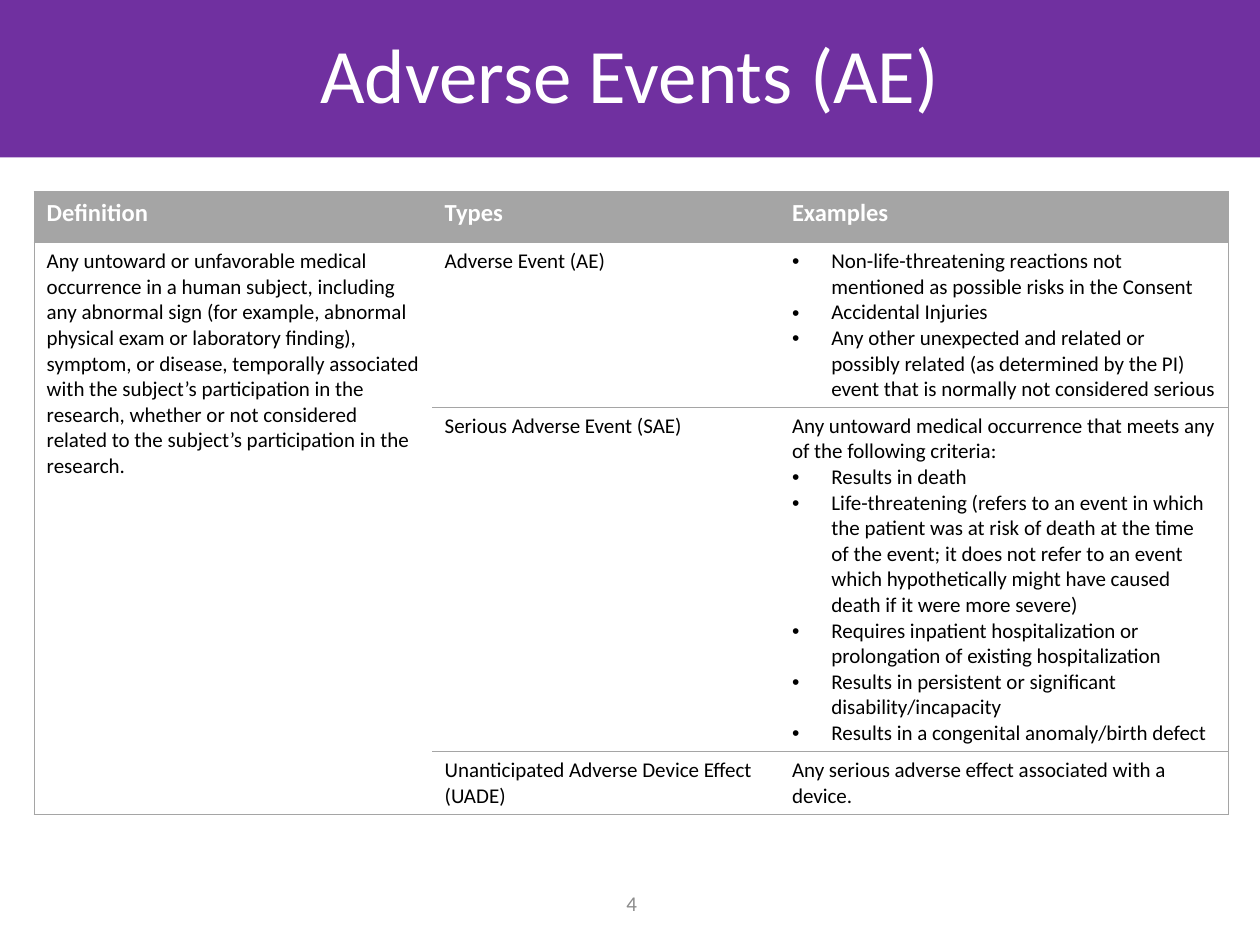
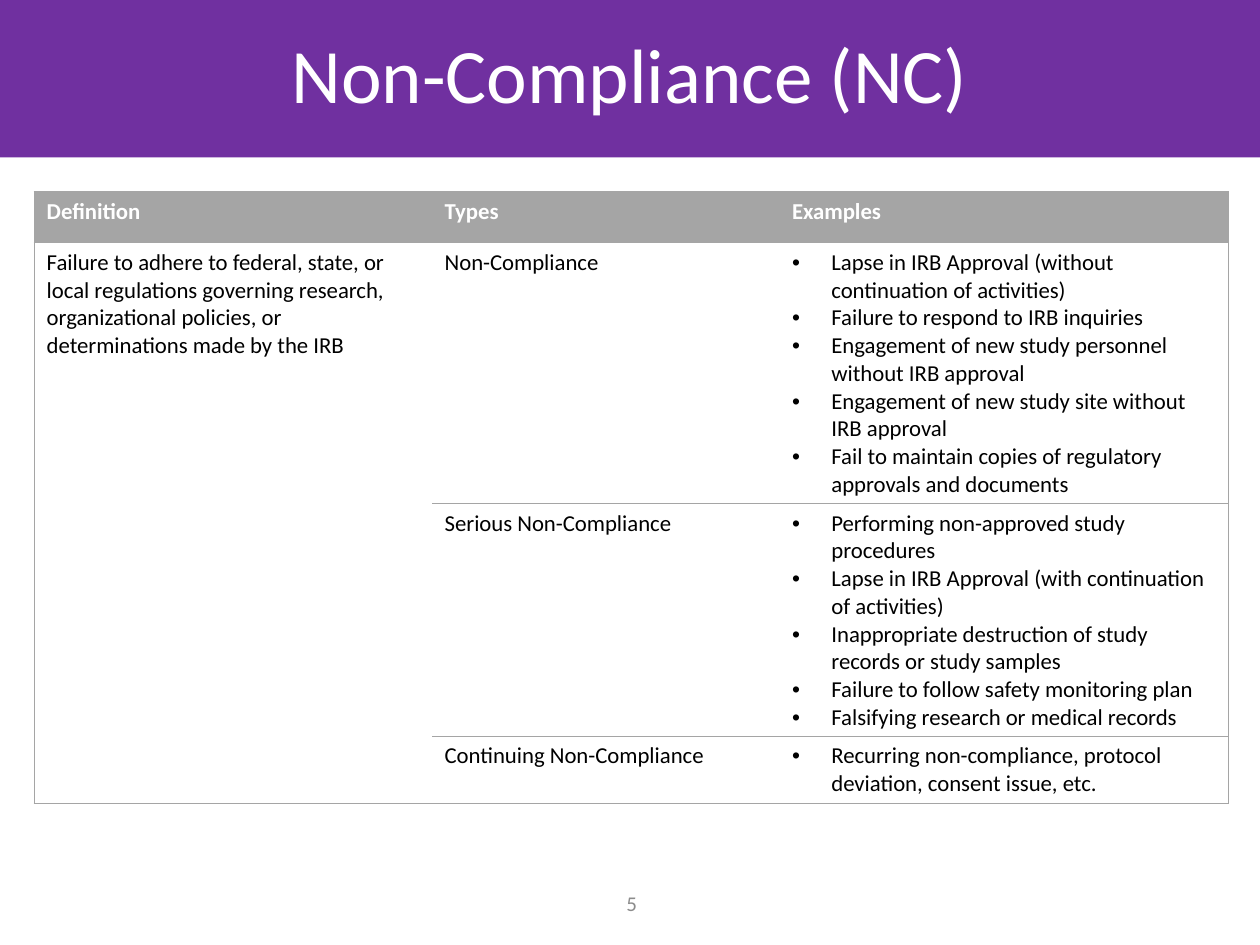
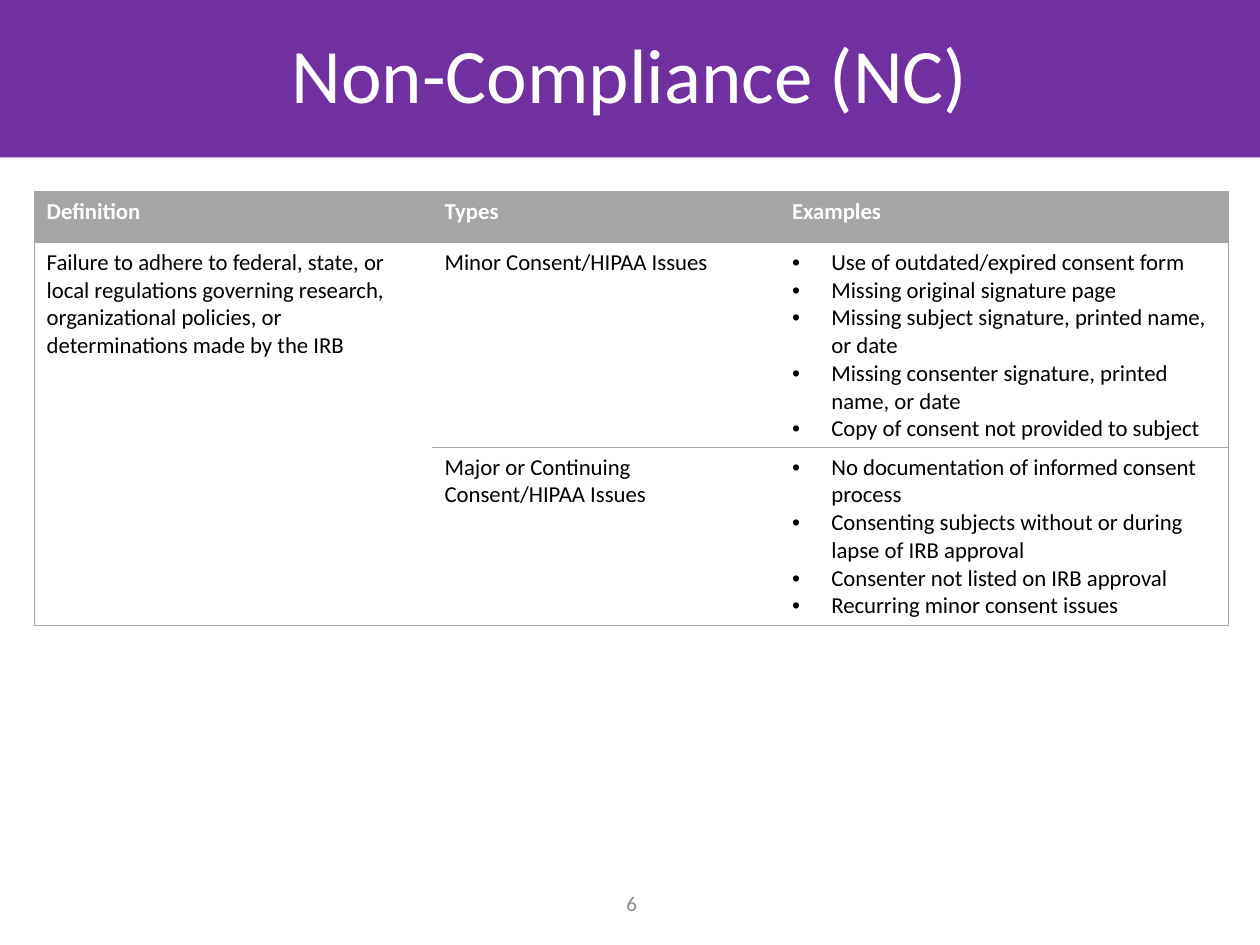
from dataclasses import dataclass

from lxml.etree import SubElement
from pptx import Presentation
from pptx.dml.color import RGBColor
from pptx.enum.shapes import MSO_SHAPE
from pptx.enum.text import MSO_ANCHOR, PP_ALIGN
from pptx.oxml.ns import qn
from pptx.slide import Slide
from pptx.table import _Cell
from pptx.text.text import TextFrame, _Paragraph
from pptx.util import Pt

PURPLE = RGBColor(0x70, 0x30, 0xA0)
GREY = RGBColor(0xA5, 0xA5, 0xA5)
NUMBER_GREY = RGBColor(0x8C, 0x8C, 0x8C)
WHITE = RGBColor(0xFF, 0xFF, 0xFF)
BLACK = RGBColor(0x00, 0x00, 0x00)

FONT = "Calibri"
SLIDE_WIDTH, SLIDE_HEIGHT = Pt(720), Pt(540)
BAND_HEIGHT = Pt(90)
TABLE_LEFT, TABLE_TOP = Pt(19.5), Pt(109.4)
COLUMN_WIDTHS = (Pt(227.4), Pt(198.5), Pt(256.8))
HEADINGS = ("Definition", "Types", "Examples")
HEADER_HEIGHT = Pt(29.2)
BULLET_INDENT = Pt(22.5)
RULE_WIDTH = Pt(0.5)
NO_STYLE_NO_GRID = "{2D5ABB26-0587-4C30-8999-92F81FD0307C}"


@dataclass(frozen=True)
class EventType:
    name: str
    height: float
    bullets: tuple[str, ...] = ()
    intro: str = ""


@dataclass(frozen=True)
class Topic:
    title: str
    number: int
    header_size: float
    body_size: float
    definition: str
    types: tuple[EventType, ...]


NON_COMPLIANCE = (
    "Failure to adhere to federal, state, or local regulations governing research, "
    "organizational policies, or determinations made by the IRB"
)

TOPICS = (
    Topic(
        "Adverse Events (AE)", 4, 14, 12,
        "Any untoward or unfavorable medical occurrence in a human subject, including any "
        "abnormal sign (for example, abnormal physical exam or laboratory finding), symptom, "
        "or disease, temporally associated with the subject’s participation in the research, "
        "whether or not considered related to the subject’s participation in the research.",
        (
            EventType("Adverse Event (AE)", 94, (
                "Non-life-threatening reactions not mentioned as possible risks in the Consent",
                "Accidental Injuries",
                "Any other unexpected and related or possibly related (as determined by the PI) "
                "event that is normally not considered serious",
            )),
            EventType("Serious Adverse Event (SAE)", 197, (
                "Results in death",
                "Life-threatening (refers to an event in which the patient was at risk of death "
                "at the time of the event; it does not refer to an event which hypothetically "
                "might have caused death if it were more severe)",
                "Requires inpatient hospitalization or prolongation of existing hospitalization",
                "Results in persistent or significant disability/incapacity",
                "Results in a congenital anomaly/birth defect",
            ), "Any untoward medical occurrence that meets any of the following criteria:"),
            EventType("Unanticipated Adverse Device Effect (UADE)", 36,
                      intro="Any serious adverse effect associated with a device."),
        ),
    ),
    Topic(
        "Non-Compliance (NC)", 5, 13, 13, NON_COMPLIANCE,
        (
            EventType("Non-Compliance", 149, (
                "Lapse in IRB Approval (without continuation of activities)",
                "Failure to respond to IRB inquiries",
                "Engagement of new study personnel without IRB approval",
                "Engagement of new study site without IRB approval",
                "Fail to maintain copies of regulatory approvals and documents",
            )),
            EventType("Serious Non-Compliance", 133, (
                "Performing non-approved study procedures",
                "Lapse in IRB Approval (with continuation of activities)",
                "Inappropriate destruction of study records or study samples",
                "Failure to follow safety monitoring plan",
                "Falsifying research or medical records",
            )),
            EventType("Continuing Non-Compliance", 38, (
                "Recurring non-compliance, protocol deviation, consent issue, etc.",
            )),
        ),
    ),
    Topic(
        "Non-Compliance (NC)", 6, 13, 13, NON_COMPLIANCE,
        (
            EventType("Minor Consent/HIPAA Issues", 117, (
                "Use of outdated/expired consent form",
                "Missing original signature page",
                "Missing subject signature, printed name, or date",
                "Missing consenter signature, printed name, or date",
                "Copy of consent not provided to subject",
            )),
            EventType("Major or Continuing Consent/HIPAA Issues", 102, (
                "No documentation of informed consent process",
                "Consenting subjects without or during lapse of IRB approval",
                "Consenter not listed on IRB approval",
                "Recurring minor consent issues",
            )),
        ),
    ),
)


def write(paragraph: _Paragraph, text: str, size: float, color: RGBColor,
          bold: bool = False) -> None:
    paragraph.text = text
    font = paragraph.runs[0].font
    for attribute, value in {"name": FONT, "size": Pt(size), "bold": bold}.items():
        setattr(font, attribute, value)
    font.color.rgb = color


def add_bullet(paragraph: _Paragraph) -> None:
    properties = paragraph._p.get_or_add_pPr()
    properties.set("marL", str(BULLET_INDENT))
    properties.set("indent", str(-BULLET_INDENT))
    SubElement(properties, qn("a:buFont"), typeface="Arial")
    SubElement(properties, qn("a:buChar"), char="•")


def write_examples(frame: TextFrame, event: EventType, size: float) -> None:
    lines = [(event.intro, False)] if event.intro else []
    lines += [(bullet, True) for bullet in event.bullets]
    for index, (text, bulleted) in enumerate(lines):
        paragraph = frame.add_paragraph() if index else frame.paragraphs[0]
        if bulleted:
            add_bullet(paragraph)
        write(paragraph, text, size, BLACK)


def rule_cell(cell: _Cell, sides: dict[str, bool]) -> None:
    """Draw a grey border on each side marked True; sides come in the order L, R, T, B."""
    properties = cell._tc.get_or_add_tcPr()
    for side, ruled in sides.items():
        line = SubElement(properties, qn(f"a:ln{side}"), w=str(RULE_WIDTH))
        if ruled:
            SubElement(SubElement(line, qn("a:solidFill")), qn("a:srgbClr"), val=str(GREY))
        else:
            SubElement(line, qn("a:noFill"))


def add_title_band(slide: Slide, title: str) -> None:
    band = slide.shapes.add_shape(MSO_SHAPE.RECTANGLE, 0, 0, SLIDE_WIDTH, BAND_HEIGHT)
    band.shadow.inherit = False
    band.fill.solid()
    band.fill.fore_color.rgb = PURPLE
    band.line.fill.background()
    band.text_frame.vertical_anchor = MSO_ANCHOR.MIDDLE
    paragraph = band.text_frame.paragraphs[0]
    paragraph.alignment = PP_ALIGN.CENTER
    paragraph.line_spacing = 0.9
    write(paragraph, title, 44, WHITE)


def add_page_number(slide: Slide, number: int) -> None:
    frame = slide.shapes.add_textbox(Pt(337), Pt(501.5), Pt(48), Pt(28.8)).text_frame
    frame.word_wrap = True
    frame.vertical_anchor = MSO_ANCHOR.MIDDLE
    frame.paragraphs[0].alignment = PP_ALIGN.CENTER
    write(frame.paragraphs[0], str(number), 12, NUMBER_GREY)


def add_event_table(slide: Slide, topic: Topic) -> None:
    heights = [HEADER_HEIGHT] + [Pt(event.height) for event in topic.types]
    table = slide.shapes.add_table(
        len(heights), len(HEADINGS), TABLE_LEFT, TABLE_TOP, sum(COLUMN_WIDTHS), sum(heights)
    ).table
    table.first_row = table.horz_banding = False
    table._tbl.tblPr.find(qn("a:tableStyleId")).text = NO_STYLE_NO_GRID
    for column, width in zip(table.columns, COLUMN_WIDTHS):
        column.width = width
    for row, height in zip(table.rows, heights):
        row.height = height

    last_row, last_column = len(heights) - 1, len(HEADINGS) - 1
    for row in range(len(heights)):
        for column in range(len(HEADINGS)):
            cell = table.cell(row, column)
            rule_cell(cell, {
                "L": column == 0,
                "R": column == last_column,
                "T": row <= 1 or column > 0,
                "B": row in (0, last_row) or column > 0,
            })
            if row == 0:
                cell.fill.solid()
                cell.fill.fore_color.rgb = GREY
            else:
                cell.fill.background()

    for column, heading in enumerate(HEADINGS):
        write(table.cell(0, column).text_frame.paragraphs[0], heading,
              topic.header_size, WHITE, bold=True)
    definition = table.cell(1, 0)
    definition.merge(table.cell(last_row, 0))
    # The bottom rule of a merged cell is taken from its first cell.
    bottom = definition._tc.tcPr.find(qn("a:lnB"))
    bottom.remove(bottom[0])
    SubElement(SubElement(bottom, qn("a:solidFill")), qn("a:srgbClr"), val=str(GREY))
    write(definition.text_frame.paragraphs[0], topic.definition, topic.body_size, BLACK)
    for row, event in enumerate(topic.types, start=1):
        write(table.cell(row, 1).text_frame.paragraphs[0], event.name, topic.body_size, BLACK)
        write_examples(table.cell(row, 2).text_frame, event, topic.body_size)


def main() -> None:
    presentation = Presentation()
    presentation.slide_width, presentation.slide_height = SLIDE_WIDTH, SLIDE_HEIGHT
    blank = presentation.slide_layouts[6]
    for topic in TOPICS:
        slide = presentation.slides.add_slide(blank)
        add_title_band(slide, topic.title)
        add_page_number(slide, topic.number)
        add_event_table(slide, topic)
    presentation.save("out.pptx")


if __name__ == "__main__":
    main()
